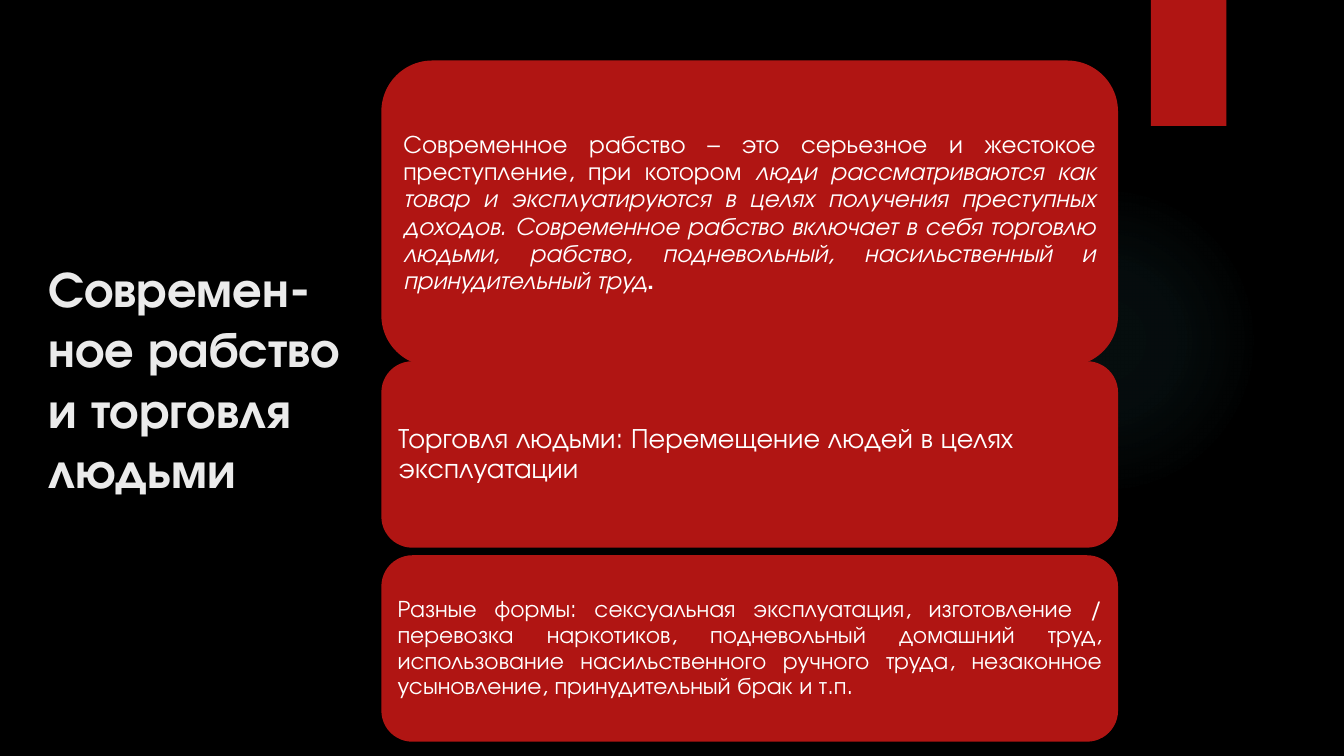
from dataclasses import dataclass

from lxml import etree
from pptx import Presentation
from pptx.dml.color import RGBColor
from pptx.enum.shapes import MSO_SHAPE as Shape
from pptx.enum.text import MSO_ANCHOR as Anchor, PP_ALIGN as Align
from pptx.oxml import parse_xml
from pptx.oxml.ns import nsdecls, qn
from pptx.shapes.autoshape import Shape as Box
from pptx.slide import Slide
from pptx.text.text import TextFrame
from pptx.util import Inches, Pt

BLACK = RGBColor(0x00, 0x00, 0x00)
RED = RGBColor(0xB0, 0x15, 0x13)
TEAL = RGBColor(0x50, 0xB9, 0xC1)
PALE = RGBColor(0xEB, 0xEB, 0xEB)
WHITE = RGBColor(0xFF, 0xFF, 0xFF)
FONT = "TeX Gyre Adventor"

# The slide is a grid of 16 columns by 9 rows
WIDTH, HEIGHT = Inches(13.33), Inches(7.5)
COLUMN, ROW = WIDTH / 16, HEIGHT / 9
CARD_LEFT, CARD_WIDTH = 4.54, 8.77


@dataclass(frozen=True)
class Area:
    left: float
    top: float
    width: float
    height: float

    def place(self) -> tuple[int, int, int, int]:
        return (round(self.left * COLUMN), round(self.top * ROW),
                round(self.width * COLUMN), round(self.height * ROW))


@dataclass(frozen=True)
class Span:
    text: str
    bold: bool = False
    italic: bool = False


@dataclass(frozen=True)
class Card:
    top: float
    height: float
    size: int
    inset: float
    align: Align
    spans: tuple[Span, ...]


TITLE = Span("Современ-ное рабство и торговля людьми\u00a0".replace("\u00a0", " "), bold=True)
CARDS = (
    Card(0.72, 3.64, 18, 0.07, Align.JUSTIFY, (
        Span("Современное рабство – это серьезное и жестокое преступление, при котором "),
        Span("люди рассматриваются как товар и эксплуатируются в целях получения "
             "преступных доходов. Современное рабство включает в себя торговлю людьми, "
             "рабство, подневольный, насильственный и принудительный труд", italic=True),
        Span(". ", bold=True),
    )),
    Card(4.3, 2.22, 20, 0.08, Align.LEFT, (
        Span("Торговля людьми: Перемещение людей в целях эксплуатации"),
    )),
    Card(6.61, 2.22, 17, 0.07, Align.JUSTIFY, (
        Span("Разные формы: сексуальная эксплуатация, изготовление / перевозка наркотиков, "
             "подневольный домашний труд, использование насильственного ручного труда, "
             "незаконное усыновление, принудительный брак и т.п."),
    )),
)


def add_block(page: Slide, kind: Shape, area: Area, color: RGBColor) -> Box:
    box = page.shapes.add_shape(kind, *area.place())
    box.shadow.inherit = False
    box.fill.solid()
    box.fill.fore_color.rgb = color
    box.line.fill.background()
    return box


def add_glow(page: Slide, area: Area) -> None:
    glow = add_block(page, Shape.OVAL, area, TEAL)
    stops = "".join(
        f'<a:gs pos="{position * 1000}"><a:srgbClr val="{TEAL}">'
        f'<a:alpha val="{opacity * 1000}"/></a:srgbClr></a:gs>'
        for position, opacity in ((0, 7), (36, 6), (69, 0)))
    gradient: etree.ElementBase = parse_xml(
        f'<a:gradFill {nsdecls("a")}><a:gsLst>{stops}</a:gsLst><a:path path="circle">'
        '<a:fillToRect l="50000" t="50000" r="50000" b="50000"/></a:path></a:gradFill>')
    properties = glow.element.spPr
    properties.replace(properties.find(qn("a:solidFill")), gradient)


def write(frame: TextFrame, spans: tuple[Span, ...], *, size: int, color: RGBColor,
          align: Align = Align.LEFT, spacing: float = 1.0) -> None:
    frame.word_wrap = True
    frame.vertical_anchor = Anchor.MIDDLE
    para = frame.paragraphs[0]
    para.alignment = align
    para.line_spacing = spacing
    for span in spans:
        run = para.add_run()
        run.text = span.text
        run.font.name = FONT
        run.font.size = Pt(size)
        run.font.color.rgb = color
        run.font.bold = span.bold
        run.font.italic = span.italic


def add_card(page: Slide, card: Card) -> None:
    box = add_block(page, Shape.ROUNDED_RECTANGLE,
                    Area(CARD_LEFT, card.top, CARD_WIDTH, card.height), RED)
    frame = box.text_frame
    frame.margin_left = frame.margin_right = Inches(card.inset)
    frame.margin_top = frame.margin_bottom = Inches(card.inset)
    write(frame, card.spans, size=card.size, color=WHITE, align=card.align, spacing=0.9)


def main() -> None:
    deck = Presentation()
    deck.slide_width, deck.slide_height = WIDTH, HEIGHT
    page = deck.slides.add_slide(deck.slide_layouts[6])
    page.background.fill.solid()
    page.background.fill.fore_color.rgb = BLACK

    # Backdrop: soft glow and corner ribbon
    add_glow(page, Area(11.29, 2.2, 3.7, 3.7))
    add_block(page, Shape.RECTANGLE, Area(13.7, 0, 0.9, 1.5), RED)

    # Title on the left
    title = page.shapes.add_textbox(*Area(0.46, 1.5, 4.08, 6).place())
    write(title.text_frame, (TITLE,), size=36, color=PALE)

    # Column of cards
    for card in CARDS:
        add_card(page, card)

    deck.save("out.pptx")


if __name__ == "__main__":
    main()
